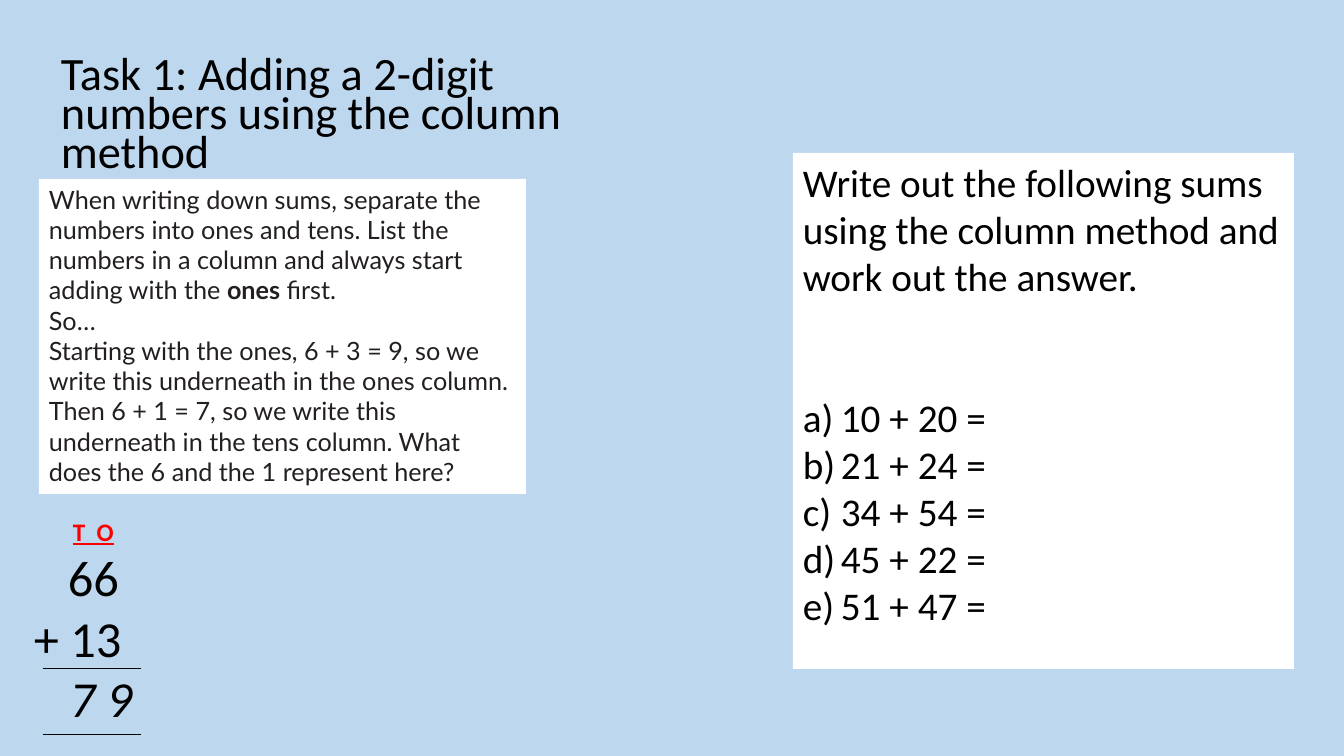
"""Build a worksheet slide on adding with the column method."""
from lxml import etree
from pptx import Presentation, util as u
from pptx.dml.color import RGBColor
from pptx.enum import shapes, text
from pptx.oxml.ns import qn

HUES = {"sky": "BDD7EE", "white": "FFFFFF", "ink": "000000", "soft": "231F20", "red": "FF0000"}
SIZE = (1344, 756)
TITLE = "Task 1: Adding a 2-digit numbers using the column method"
TASK = "Write out the following sums using the column method and work out the answer."
SUMS = ["10 + 20 =", "21 + 24 =", "34 + 54 =", "45 + 22 =", "51 + 47 ="]
GUIDE = [
    [("When writing down sums, separate the numbers into ones and tens. List the "
      "numbers in a column and always start adding with the ", {}),
     ("ones", {"bold": True}), (" first.", {})],
    [("So…", {})],
    [("Starting with the ones, 6 + 3 = 9, so we write this underneath in the ones column.", {})],
    [("Then 6 + 1 = 7, so we write this underneath in the tens column. "
      "What does the 6 and the 1 represent here?", {})],
]
WORK = [
    ("T  O", 39, {"size": 18, "hue": "red", "bold": True, "under": True}),
    ("66", 34, {"size": 36}),
    ("+ 13", 0, {"size": 36}),
    ("7 9", 36, {"size": 36, "slant": True}),
]
BOXES = {
    "title": (51, 49, 563, 138),
    "task": (793, 153, 501, 516),
    "guide": (39, 179, 487, 315),
    "work": (24, 511, 235, 316),
}
RULES = {"left": 43, "right": 141, "rows": (668, 734)}
INDENT = 38
GAP = 67


def px(n):
    return round(n * u.Inches(1) / 100.8)


def hue(name):
    return RGBColor.from_string(HUES[name])


def make_box(slide, name, fill=None):
    at = [px(n) for n in BOXES[name]]
    if fill:
        box = slide.shapes.add_shape(shapes.MSO_SHAPE.RECTANGLE, *at)
        box.shadow.inherit = False
        box.fill.solid()
        box.fill.fore_color.rgb = hue(fill)
        box.line.fill.background()
    else:
        box = slide.shapes.add_textbox(*at)
    frame = box.text_frame
    frame.word_wrap = True
    frame.vertical_anchor = text.MSO_ANCHOR.TOP
    return frame


def next_para(frame, first=False):
    para = frame.paragraphs[0] if first else frame.add_paragraph()
    para.alignment = text.PP_ALIGN.LEFT
    return para


def write(para, words, size=18, face="Calibri", ink="ink", **style):
    run = para.add_run()
    run.text = words
    font = run.font
    font.size, font.name = u.Pt(size), face
    font.color.rgb = hue(style.get("hue", ink))
    font.bold = style.get("bold", False)
    font.italic = style.get("slant", False)
    font.underline = style.get("under", False)


def indent(para, left, hang=0):
    props = para._p.get_or_add_pPr()
    props.set("marL", str(px(left)))
    props.set("indent", str(-px(hang)))
    return props


def add_rule(slide, row):
    ends = [px(n) for n in (RULES["left"], row, RULES["right"], row)]
    rule = slide.shapes.add_connector(shapes.MSO_CONNECTOR.STRAIGHT, *ends)
    rule.line.color.rgb = hue("ink")
    rule.line.width = u.Pt(0.5)
    etree.SubElement(rule._element.spPr, qn("a:effectLst"))


def main():
    deck = Presentation()
    deck.slide_width, deck.slide_height = [px(n) for n in SIZE]
    slide = deck.slides.add_slide(deck.slide_layouts[6])
    slide.background.fill.solid()
    slide.background.fill.fore_color.rgb = hue("sky")

    frame = make_box(slide, "title")
    frame.vertical_anchor = text.MSO_ANCHOR.MIDDLE
    para = next_para(frame, True)
    para.line_spacing = 0.7
    write(para, TITLE, size=33.1)

    frame = make_box(slide, "task", "white")
    write(next_para(frame, True), TASK, size=28)
    for i, words in enumerate(SUMS):
        para = next_para(frame)
        para.space_before = u.Pt(0 if i else GAP)
        props = indent(para, INDENT, INDENT)
        etree.SubElement(props, qn("a:buFont"), typeface="+mj-lt")
        etree.SubElement(props, qn("a:buAutoNum"), type="alphaLcParenR")
        write(para, words, size=28)

    frame = make_box(slide, "guide", "white")
    for i, runs in enumerate(GUIDE):
        para = next_para(frame, i == 0)
        for words, style in runs:
            write(para, words, face="Lato", ink="soft", **style)

    frame = make_box(slide, "work")
    for i, (words, left, style) in enumerate(WORK):
        para = next_para(frame, i == 0)
        indent(para, left)
        write(para, words, **style)

    for row in RULES["rows"]:
        add_rule(slide, row)
    deck.save("out.pptx")


if __name__ == "__main__":
    main()
